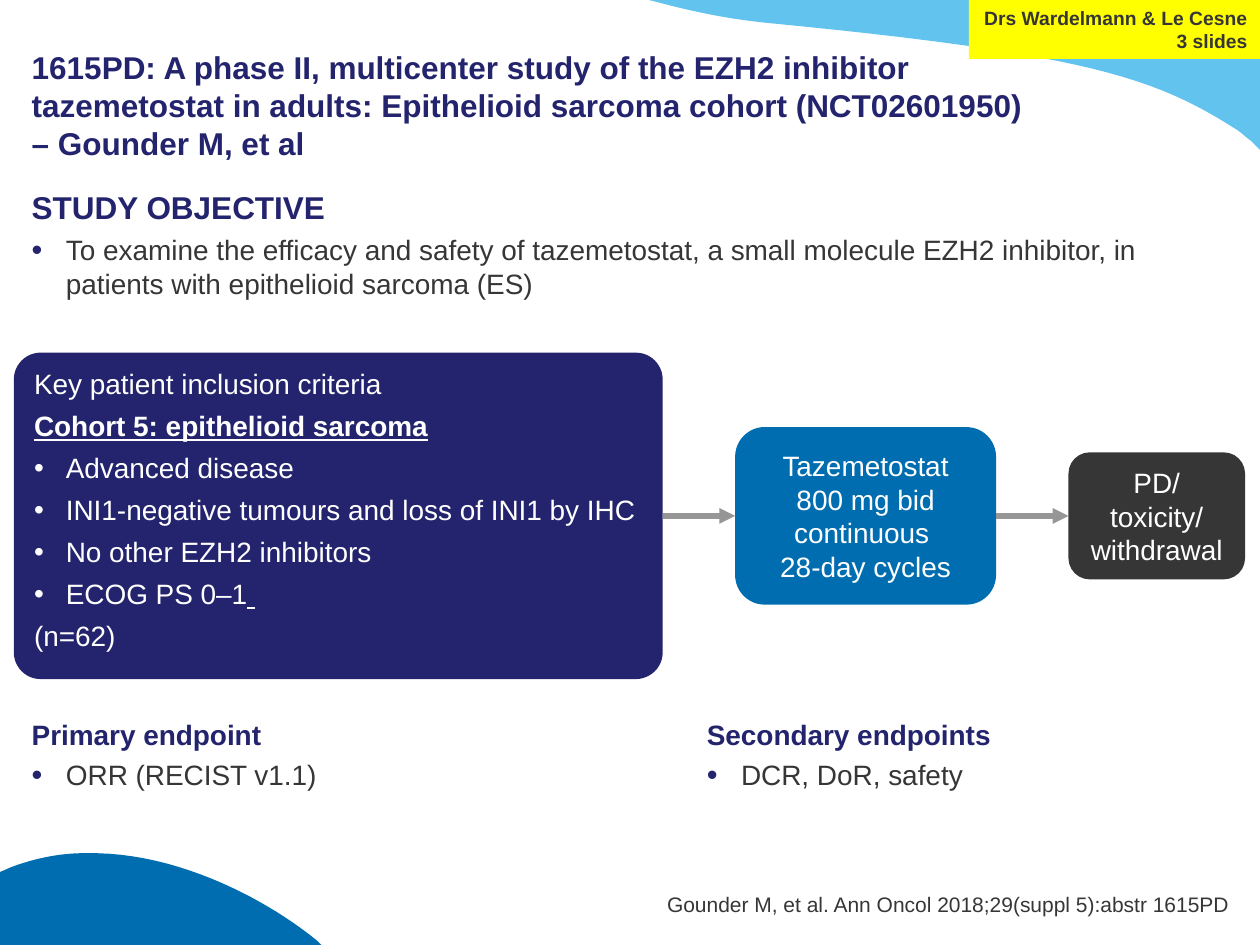
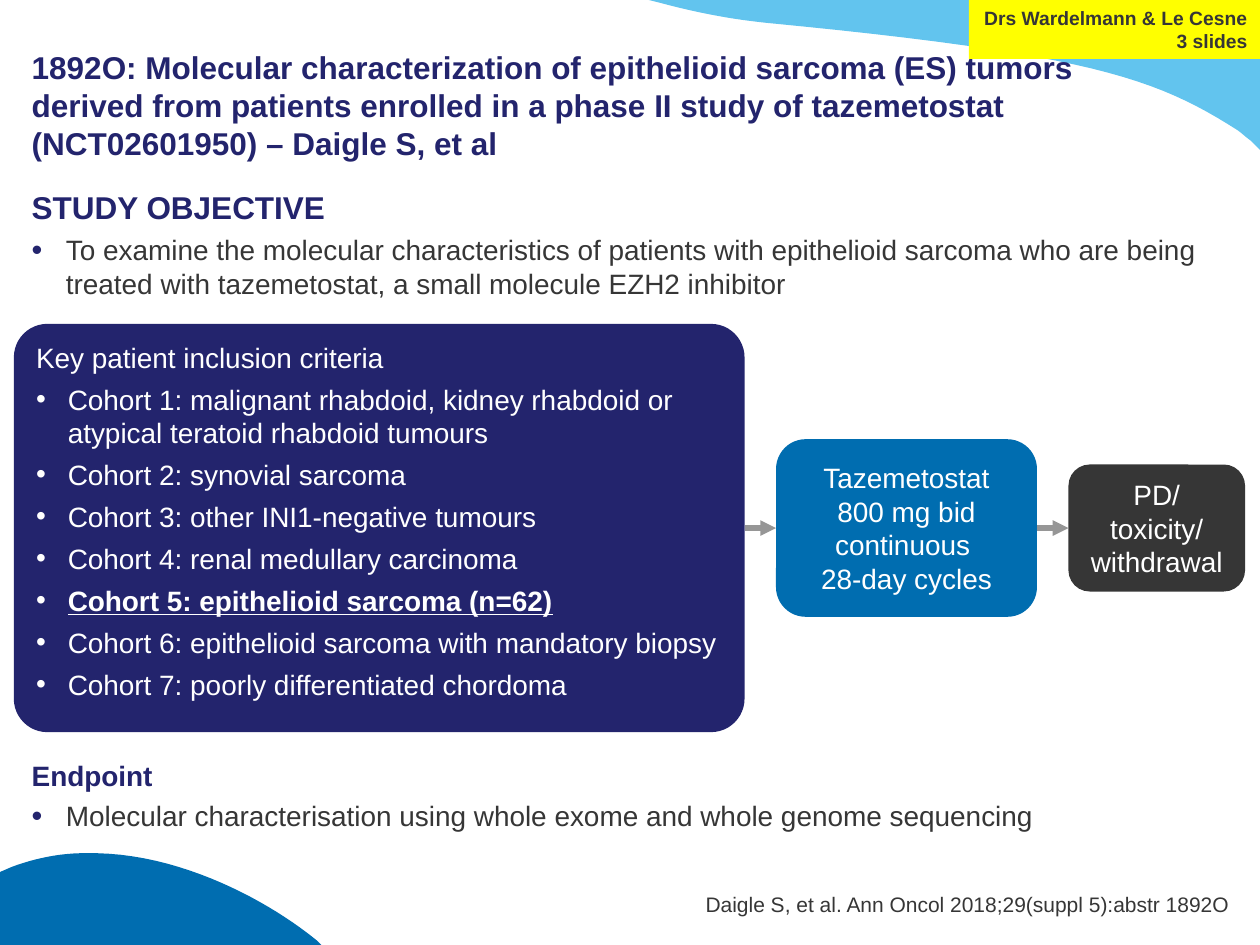
import copy

import pptx
import pptx.dml.color
import pptx.enum.shapes
import pptx.enum.text
import pptx.oxml
import pptx.oxml.ns
import pptx.util
from lxml import etree

Cm = pptx.util.Cm
qn = pptx.oxml.ns.qn
SHAPE = pptx.enum.shapes.MSO_SHAPE
ANCHOR = pptx.enum.text.MSO_ANCHOR
ALIGN = pptx.enum.text.PP_ALIGN

NAVY, BLUE, SKY = "23246D", "006DB0", "62C4EE"
DARK, GREY, YELLOW, WHITE = "363636", "969696", "FFFF00", "FFFFFF"


def color(value):
    return pptx.dml.color.RGBColor.from_string(value)


def write(tf, text, strong="", size=16, ink=DARK, bold=False, align=ALIGN.LEFT,
          after=0, bullet=None, bullet_size=110, indent=0.69):
    """Add a paragraph; strong is a bold, underlined ending."""
    p = tf.paragraphs[0] if not tf.paragraphs[0].runs else tf.add_paragraph()
    p.text = text
    p.alignment = align
    p.space_after = pptx.util.Pt(after)
    if strong:
        p.add_run().text = strong
    for r in p.runs:
        r.font.name = "Arial"
        r.font.size = pptx.util.Pt(size)
        r.font.bold = bold
        r.font.color.rgb = color(ink)
    if strong:
        p.runs[-1].font.bold = p.runs[-1].font.underline = True
    for br in p._p.findall(qn("a:br")):
        br.append(copy.deepcopy(p.runs[0].font._element))
    if bullet:
        pPr = p._p.get_or_add_pPr()
        pPr.set("marL", str(Cm(indent)))
        pPr.set("indent", str(-Cm(indent)))
        clr = etree.SubElement(pPr, qn("a:buClr"))
        etree.SubElement(clr, qn("a:srgbClr"), val=bullet)
        etree.SubElement(pPr, qn("a:buSzPct"), val=str(bullet_size * 1000))
        etree.SubElement(pPr, qn("a:buFont"), typeface="Arial")
        etree.SubElement(pPr, qn("a:buChar"), char="•")


# Corner waves in cm: two numbers make a line, six a Bézier curve
waves = [
    (SKY, (13.08, 0), [
        (25.4, 0), (25.4, 3.02), (25.22, 2.84),
        (25.12, 2.77, 25.04, 2.69, 24.94, 2.62),
        (23.29, 1.57, 21.95, 1.09, 15.44, 0.46),
        (14.66, 0.38, 13.94, 0.23, 13.28, 0.05)]),
    (BLUE, (1.7, 17.2), [
        (3.68, 17.15, 5.54, 18.26, 6.4, 18.97),
        (6.48, 19.05), (0, 19.05), (0, 17.58), (0.23, 17.48),
        (0.71, 17.3, 1.22, 17.2, 1.7, 17.2)]),
]

# Criteria are (plain text, strong ending, bulleted)
# Endpoints are (left, top, width, height, side inset, heading, text)
studies = [
    dict(
        title="1615PD: A phase II, multicenter study of the EZH2 inhibitor tazemetostat "
              "in adults: Epithelioid sarcoma cohort (NCT02601950) \n– Gounder M, et al",
        title_width=20.57,
        objective="To examine the efficacy and safety of tazemetostat, a small molecule "
                  "EZH2 inhibitor, in patients with epithelioid sarcoma (ES)",
        criteria_box=(7.11, 13.08, 6.58),
        criteria=[
            ("Key patient inclusion criteria", "", False),
            ("", "Cohort 5: epithelioid sarcoma", False),
            ("Advanced disease", "", True),
            ("INI1-negative tumours and loss of INI1 by IHC", "", True),
            ("No other EZH2 inhibitors", "", True),
            ("ECOG PS 0–1", " ", True),
            ("(n=62)", "", False)],
        endpoints=[
            (0.64, 14.33, 12.57, 1.96, 0, "Primary endpoint", "ORR (RECIST v1.1)"),
            (14, 14.33, 10.26, 2.34, 0.25, "Secondary endpoints", "DCR, DoR, safety")],
        reference="Gounder M, et al. Ann Oncol 2018;29(suppl 5):abstr 1615PD",
        reference_width=11.43),
    dict(
        title="1892O: Molecular characterization of epithelioid sarcoma (ES) tumors derived "
              "from patients enrolled in a phase II study of tazemetostat (NCT02601950) "
              "– Daigle S, et al",
        title_width=21.46,
        objective="To examine the molecular characteristics of patients with epithelioid "
                  "sarcoma who are being treated with tazemetostat, a small molecule EZH2 "
                  "inhibitor",
        criteria_box=(6.53, 14.73, 8.23),
        criteria=[
            ("Key patient inclusion criteria", "", False),
            ("Cohort 1: malignant rhabdoid, kidney rhabdoid or atypical teratoid rhabdoid "
             "tumours", "", True),
            ("Cohort 2: synovial sarcoma", "", True),
            ("Cohort 3: other INI1-negative tumours", "", True),
            ("Cohort 4: renal medullary carcinoma", "", True),
            ("", "Cohort 5: epithelioid sarcoma (n=62)", True),
            ("Cohort 6: epithelioid sarcoma with mandatory biopsy", "", True),
            ("Cohort 7: poorly differentiated chordoma", "", True)],
        endpoints=[
            (0.64, 15.16, 21.95, 1.96, 0, "Endpoint",
             "Molecular characterisation using whole exome and whole genome sequencing")],
        reference="Daigle S, et al. Ann Oncol 2018;29(suppl 5):abstr 1892O",
        reference_width=10.64),
]

prs = pptx.Presentation()
prs.slide_width, prs.slide_height = Cm(25.4), Cm(19.05)

for study in studies:
    s = prs.slides.add_slide(prs.slide_layouts[6])

    # Corner waves
    for fill, start, segments in waves:
        points, (x0, y0) = [], start
        for seg in segments:
            if len(seg) == 2:
                points.append(seg)
            else:
                x1, y1, x2, y2, x3, y3 = seg
                for t in [i / 24 for i in range(1, 25)]:
                    a, b, c, d = (1 - t)**3, 3 * t * (1 - t)**2, 3 * t**2 * (1 - t), t**3
                    points.append((a * x0 + b * x1 + c * x2 + d * x3,
                                   a * y0 + b * y1 + c * y2 + d * y3))
            x0, y0 = seg[-2:]
        builder = s.shapes.build_freeform(Cm(start[0]), Cm(start[1]))
        builder.add_line_segments([(Cm(x), Cm(y)) for x, y in points], close=True)
        sp = builder.convert_to_shape()
        sp.fill.solid()
        sp.fill.fore_color.rgb = color(fill)
        sp.line.fill.background()
        sp.shadow.inherit = False

    # Title, objective, reference and endpoint text boxes
    ref_width = study["reference_width"]
    heading = dict(ink=NAVY, bold=True, after=4)
    item = dict(after=4, bullet=NAVY)
    text_boxes = [
        (0.64, 0.64, study["title_width"], 2.62, 0, 0.13, 0, ANCHOR.BOTTOM,
         [(study["title"], dict(size=18, ink=NAVY, bold=True))]),
        (0.64, 3.66, 24.13, 14.76, 0, 0.13, 0.13, ANCHOR.TOP,
         [("STUDY OBJECTIVE", dict(heading, size=18)), (study["objective"], item)]),
        (24.79 - ref_width, 17.98, ref_width, 0.51, 0, 0, 0, ANCHOR.BOTTOM,
         [(study["reference"], dict(size=12, align=ALIGN.RIGHT))]),
    ]
    for left, top, width, height, side, head, text in study["endpoints"]:
        text_boxes.append((left, top, width, height, side, 0.13, 0.13, ANCHOR.TOP,
                           [(head, heading), (text, item)]))
    for left, top, width, height, side, above, below, anchor, paragraphs in text_boxes:
        sp = s.shapes.add_textbox(Cm(left), Cm(top), Cm(width), Cm(height))
        tf = sp.text_frame
        tf.word_wrap = text_is_long = paragraphs[0][0] != study["reference"]
        tf.vertical_anchor = anchor
        tf.margin_left = tf.margin_right = Cm(side)
        tf.margin_top, tf.margin_bottom = Cm(above), Cm(below)
        for text, style in paragraphs:
            write(tf, text, **style)

    # Speaker tag and study flow: the flow boxes share one centre line
    top, width, height = study["criteria_box"]
    middle = top + height / 2
    pd_left, drug_width = 21.54, 5.26
    drug_left = (0.28 + width + pd_left - drug_width) / 2
    centred = dict(ink=WHITE, align=ALIGN.CENTER)
    tag = dict(size=11, bold=True, align=ALIGN.RIGHT)
    criteria = [(text, dict(strong=strong, ink=WHITE, after=4.8, indent=0.64,
                            bullet=WHITE if bulleted else None, bullet_size=100))
                for text, strong, bulleted in study["criteria"]]
    boxes = [
        (19.53, 0, 5.87, 1.19, None, YELLOW, ANCHOR.TOP, 0.13,
         [("Drs Wardelmann & Le Cesne", tag), ("3 slides", tag)]),
        (0.28, top, width, height, 0.082, NAVY, ANCHOR.TOP, 0.13, criteria),
        (drug_left, middle - 1.79, drug_width, 3.58, 0.167, BLUE, ANCHOR.MIDDLE, 0,
         [("Tazemetostat 800 mg bid continuous \n28-day cycles", centred)]),
        (pd_left, middle - 1.28, 3.56, 2.56, 0.167, DARK, ANCHOR.MIDDLE, 0,
         [("PD/\ntoxicity/\nwithdrawal", centred)]),
    ]
    flow = []
    for left, top, width, height, corner, fill, anchor, inset, paragraphs in boxes:
        kind = SHAPE.ROUNDED_RECTANGLE if corner else SHAPE.RECTANGLE
        sp = s.shapes.add_shape(kind, Cm(left), Cm(top), Cm(width), Cm(height))
        sp.fill.solid()
        sp.fill.fore_color.rgb = color(fill)
        sp.line.fill.background()
        sp.shadow.inherit = False
        tf = sp.text_frame
        tf.word_wrap = corner is not None
        tf.vertical_anchor = anchor
        tf.margin_top = tf.margin_bottom = Cm(inset)
        for text, style in paragraphs:
            write(tf, text, **style)
        if corner:
            sp.adjustments[0] = corner
            flow.append(sp)

    # Arrows between the flow boxes
    for source, target in zip(flow, flow[1:]):
        line = s.shapes.add_connector(pptx.enum.shapes.MSO_CONNECTOR.STRAIGHT, 0, 0, 0, 0)
        line.begin_connect(source, 3)
        line.end_connect(target, 1)
        line.line.color.rgb = color(GREY)
        line.line.width = pptx.util.Pt(3)
        etree.SubElement(line.line._get_or_add_ln(), qn("a:tailEnd"), type="triangle")
        etree.SubElement(line._element.spPr, qn("a:effectLst"))

prs.save("out.pptx")
